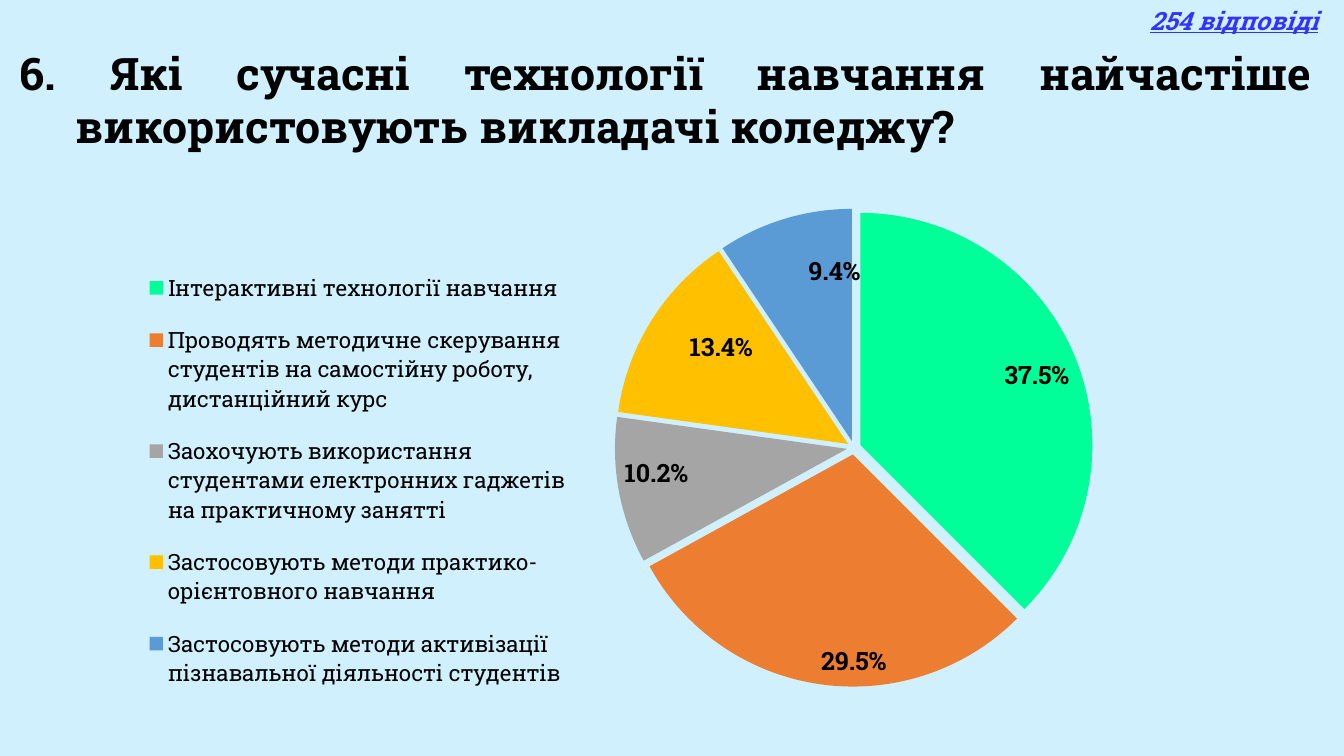
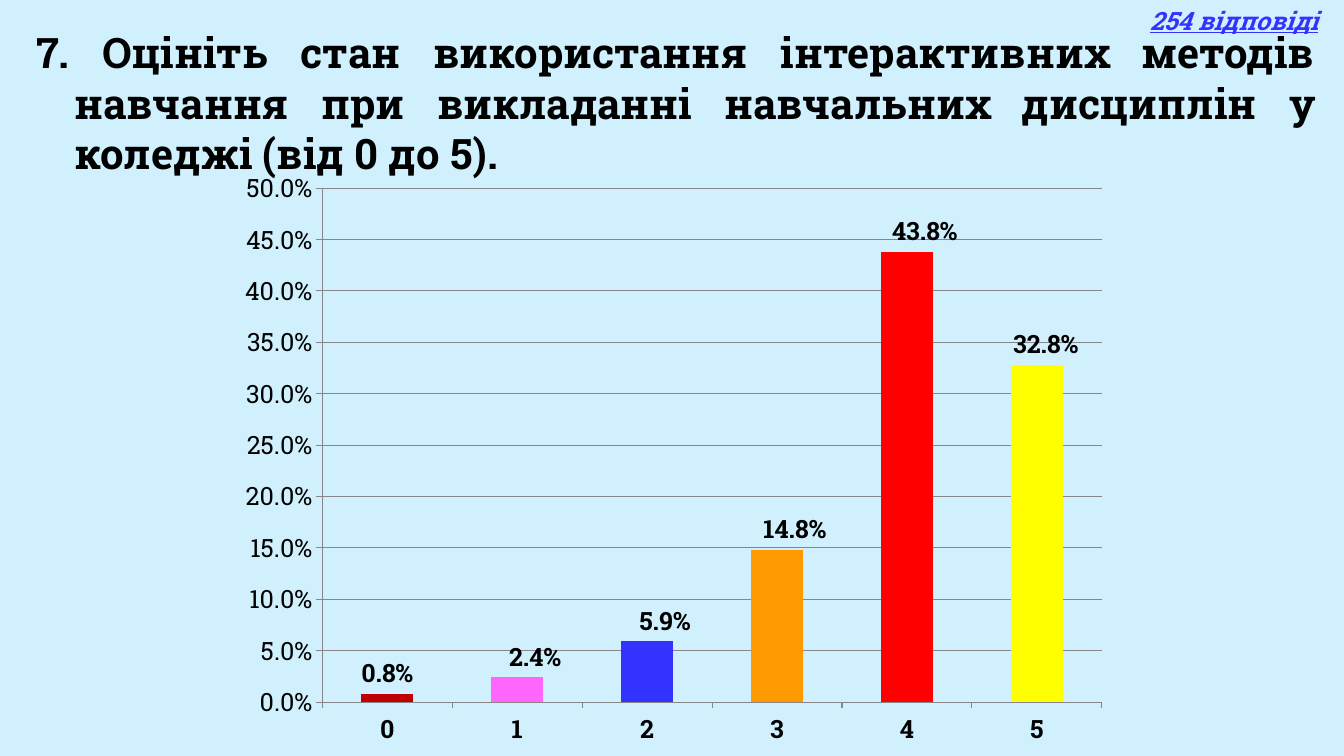
import pptx
import pptx.util
import pptx.dml.color
import pptx.chart.data
import pptx.enum.chart
import pptx.enum.text
import pptx.oxml.ns
import pptx.oxml.xmlchemy

Cm = pptx.util.Cm
Pt = pptx.util.Pt
qn = pptx.oxml.ns.qn
new_element = pptx.oxml.xmlchemy.OxmlElement
ChartType = pptx.enum.chart.XL_CHART_TYPE
LabelPosition = pptx.enum.chart.XL_LABEL_POSITION
Align = pptx.enum.text.PP_ALIGN
Anchor = pptx.enum.text.MSO_ANCHOR

FONT = "Roboto Slab"
PERCENT = "0.0%"
COLORS = {
    "background": "CFF0FC",
    "text": "000000",
    "count": "3333FF",
    "grid": "868686",
}
TECHNOLOGIES = [
    ("Інтерактивні технології навчання", 0.375, "00FF99"),
    ("Проводять методичне скерування студентів на самостійну роботу, "
     "дистанційний курс", 0.295, "ED7D31"),
    ("Заохочують використання студентами електронних гаджетів "
     "на практичному занятті", 0.102, "A5A5A5"),
    ("Застосовують методи практико-орієнтовного навчання", 0.134, "FFC000"),
    ("Застосовують методи активізації пізнавальної діяльності студентів",
     0.094, "5B9BD5"),
]
RATINGS = [
    ("0", 0.008, "C00000"),
    ("1", 0.024, "FF66FF"),
    ("2", 0.059, "3333FF"),
    ("3", 0.148, "FF9900"),
    ("4", 0.438, "FF0000"),
    ("5", 0.328, "FFFF00"),
]


def rgb(name):
    return pptx.dml.color.RGBColor.from_string(COLORS.get(name, name))


def style_font(font, size=18, color="text", bold=False, italic=False,
               underline=False):
    font.name = FONT
    font.size = Pt(size)
    font.bold = bold
    font.italic = italic
    font.underline = underline
    font.color.rgb = rgb(color)


def add_text(slide, text, box, align=Align.LEFT, anchor=Anchor.TOP, hanging=0,
             **font_style):
    frame = slide.shapes.add_textbox(*map(Cm, box)).text_frame
    frame.word_wrap = True
    frame.vertical_anchor = anchor
    paragraph = frame.paragraphs[0]
    paragraph.alignment = align
    if hanging:
        properties = paragraph._p.get_or_add_pPr()
        properties.set("marL", str(Cm(hanging)))
        properties.set("indent", str(-Cm(hanging)))
    run = paragraph.add_run()
    run.text = text
    style_font(run.font, **font_style)


def add_question_slide(deck, question, box, **title_style):
    slide = deck.slides.add_slide(deck.slide_layouts[6])
    slide.background.fill.solid()
    slide.background.fill.fore_color.rgb = rgb("background")
    add_text(slide, "254 відповіді", (28.73, 0, 5.13, 1.02), color="count",
             bold=True, italic=True, underline=True)
    add_text(slide, question, box, align=Align.JUSTIFY, bold=True, **title_style)
    return slide


def set_layout(parent, index, **settings):
    for old in parent.findall(qn("c:layout")):
        parent.remove(old)
    layout = new_element("c:layout")
    manual = new_element("c:manualLayout")
    for key, value in settings.items():
        item = new_element(f"c:{key}")
        item.set("val", str(value))
        manual.append(item)
    layout.append(manual)
    parent.insert(index, layout)


def place_block(parent, index, block, **target):
    set_layout(parent, index, **target, xMode="edge", yMode="edge",
               **dict(zip("xywh", block)))


def add_answer_chart(slide, kind, answers, box, plot_block, label_position,
                     label_shifts):
    data = pptx.chart.data.CategoryChartData(number_format=PERCENT)
    names, shares, fills = zip(*answers)
    data.categories = names
    data.add_series("Series 1", shares)
    chart = slide.shapes.add_chart(kind, *map(Cm, box), data).chart
    chart.has_title = False
    chart.has_legend = False
    style_font(chart.font)
    place_block(chart._chartSpace.chart.plotArea, 0, plot_block,
                layoutTarget="inner")

    series = chart.plots[0].series[0]
    labels = series.data_labels
    labels.show_value = True
    labels.number_format = PERCENT
    labels.number_format_is_linked = False
    labels.position = label_position
    style_font(labels.font, bold=True)
    for leader in labels._element.findall(qn("c:showLeaderLines")):
        leader.set("val", "0")
    for index, fill in enumerate(fills):
        answer = series.points[index]
        answer.format.fill.solid()
        answer.format.fill.fore_color.rgb = rgb(fill)
        answer.format.line.fill.background()
    for index, (x, y) in label_shifts.items():
        label = series.points[index].data_label
        style_font(label.font, bold=True)
        label.position = label_position
        set_layout(labels._element.get_dLbl_for_point(index), 1, x=x, y=y)
    return chart


def separate_slices(chart, percent):
    explosion = new_element("c:explosion")
    explosion.set("val", str(percent))
    chart.plots[0].series[0]._element.find(qn("c:dPt")).addprevious(explosion)


def add_legend(chart, block):
    chart.has_legend = True
    chart.legend.position = pptx.enum.chart.XL_LEGEND_POSITION.RIGHT
    chart.legend.include_in_layout = False
    style_font(chart.legend.font, size=16)
    place_block(chart.legend._element, 1, block)


def style_axes(chart):
    chart.plots[0].vary_by_categories = False
    chart.plots[0].gap_width = 150
    shares = chart.value_axis
    shares.minimum_scale = 0
    shares.maximum_scale = 0.5
    shares.major_unit = 0.05
    shares.has_major_gridlines = True
    shares.tick_labels.number_format = PERCENT
    shares.tick_labels.number_format_is_linked = False
    for axis in (shares, chart.category_axis):
        style_font(axis.tick_labels.font, bold=axis is not shares)
        axis.major_tick_mark = pptx.enum.chart.XL_TICK_MARK.OUTSIDE
    for line in (shares.format.line, chart.category_axis.format.line,
                 shares.major_gridlines.format.line):
        line.color.rgb = rgb("grid")
        line.width = Pt(0.75)


def main():
    deck = pptx.Presentation()
    deck.slide_width = Cm(33.87)
    deck.slide_height = Cm(19.05)

    technologies = add_question_slide(
        deck,
        "6. Які сучасні технології навчання найчастіше використовують "
        "викладачі коледжу?",
        (0.23, 1.02, 33.12, 3), size=32, hanging=1.42)
    pie = add_answer_chart(
        technologies, ChartType.PIE, TECHNOLOGIES, (2.54, 3.45, 28.12, 15.06),
        (0.38, 0.12, 0.59, 0.8), LabelPosition.INSIDE_END,
        {3: (0.03, 0.01), 4: (0.02, 0.05)})
    separate_slices(pie, 3)
    add_legend(pie, (0.04, 0.19, 0.38, 0.77))

    ratings = add_question_slide(
        deck,
        "7. Оцініть стан використання інтерактивних методів навчання при "
        "викладанні навчальних дисциплін у коледжі (від 0 до 5).",
        (0.66, 0.53, 32.74, 4.11), size=30, hanging=0.97, anchor=Anchor.MIDDLE)
    columns = add_answer_chart(
        ratings, ChartType.COLUMN_CLUSTERED, RATINGS, (5.64, 3.99, 22.58, 15.06),
        (0.11, 0.05, 0.87, 0.86), LabelPosition.OUTSIDE_END,
        {1: (0.02, 0), 2: (0.02, 0), 3: (0.02, 0), 4: (0.02, 0), 5: (0.01, 0)})
    style_axes(columns)

    deck.save("out.pptx")


if __name__ == "__main__":
    main()
